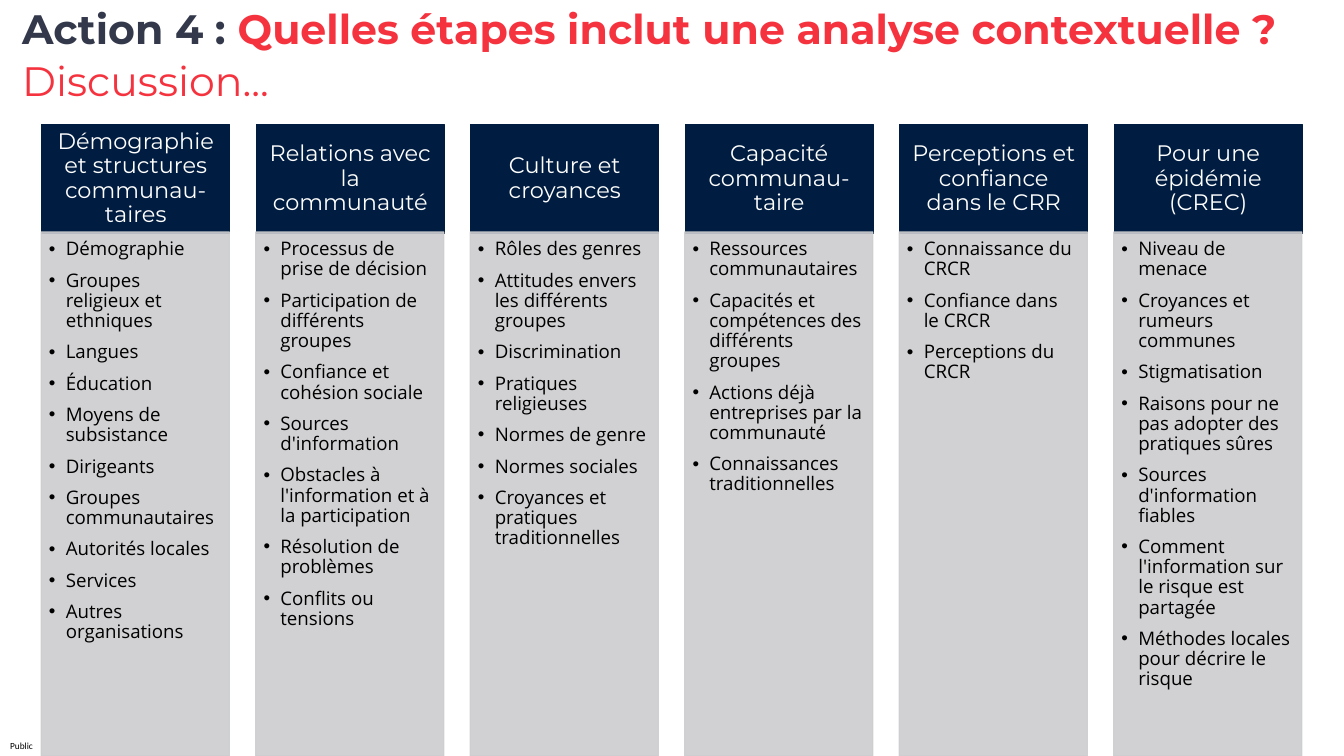
from dataclasses import dataclass

from lxml import etree
from pptx import Presentation
from pptx.dml.color import RGBColor
from pptx.enum.shapes import MSO_SHAPE
from pptx.enum.text import MSO_ANCHOR, MSO_AUTO_SIZE, PP_ALIGN
from pptx.oxml.ns import qn
from pptx.util import Pt

RECTANGLE = MSO_SHAPE.RECTANGLE
TOP, MIDDLE = MSO_ANCHOR.TOP, MSO_ANCHOR.MIDDLE
LEFT, CENTER = PP_ALIGN.LEFT, PP_ALIGN.CENTER
NO_FIT = MSO_AUTO_SIZE.NONE

HEADING_FONT, BODY_FONT = "Montserrat", "Open Sans"
NAVY, GREY, SLATE, RED = "001D41", "CCCDCF", "33394B", "F5333F"
WHITE, BLACK = "FFFFFF", "000000"

# Column grid, in points
FIRST_LEFT, COLUMN_STEP, COLUMN_WIDTH = 44.64, 229.82, 201.6
HEADER_TOP, HEADER_HEIGHT = 133.2, 116.64
LIST_TOP, LIST_HEIGHT, LIST_SHIFT = 248.4, 561.6, -0.5
BULLET_INDENT = 18


@dataclass
class Column:
    heading: str
    items: list[str]


@dataclass
class Frame:
    left: float
    top: float
    width: float
    height: float


COLUMNS = [
    Column("Démographie et structures communau-taires", [
        "Démographie", "Groupes religieux et ethniques", "Langues", "Éducation",
        "Moyens de subsistance", "Dirigeants", "Groupes communautaires",
        "Autorités locales", "Services", "Autres organisations"]),
    Column("Relations avec la communauté", [
        "Processus de prise de décision", "Participation de différents groupes",
        "Confiance et cohésion sociale", "Sources d'information",
        "Obstacles à l'information et à la participation",
        "Résolution de problèmes", "Conflits ou tensions"]),
    Column("Culture et croyances", [
        "Rôles des genres", "Attitudes envers les différents groupes",
        "Discrimination", "Pratiques religieuses", "Normes de genre",
        "Normes sociales", "Croyances et pratiques traditionnelles"]),
    Column("Capacité communau-taire", [
        "Ressources communautaires",
        "Capacités et compétences des différents groupes",
        "Actions déjà entreprises par la communauté",
        "Connaissances traditionnelles"]),
    Column("Perceptions et confiance dans le CRR", [
        "Connaissance du CRCR", "Confiance dans le CRCR", "Perceptions du CRCR"]),
    Column("Pour une épidémie (CREC)", [
        "Niveau de menace", "Croyances et rumeurs communes", "Stigmatisation",
        "Raisons pour ne pas adopter des pratiques sûres",
        "Sources d'information fiables",
        "Comment l'information sur le risque est partagée",
        "Méthodes locales pour décrire le risque"]),
]


def color(value: str) -> RGBColor:
    return RGBColor.from_string(value)


def style_font(font, name: str, size: float, value: str, bold: bool = False) -> None:
    font.name, font.size, font.bold = name, Pt(size), bold
    font.color.rgb = color(value)


def set_frame(text_frame, anchor, insets: tuple[float, float, float, float]) -> None:
    text_frame.word_wrap = True
    text_frame.auto_size = NO_FIT
    text_frame.vertical_anchor = anchor
    (text_frame.margin_left, text_frame.margin_top,
     text_frame.margin_right, text_frame.margin_bottom) = map(Pt, insets)


def add_panel(page, frame: Frame, value: str, opacity: int = 100):
    """Draw a rectangle whose fill and outline share one colour."""
    panel = page.shapes.add_shape(RECTANGLE, Pt(frame.left), Pt(frame.top),
                                  Pt(frame.width), Pt(frame.height))
    panel.shadow.inherit = False
    panel.fill.solid()
    panel.fill.fore_color.rgb = color(value)
    panel.line.color.rgb = color(value)
    panel.line.width = Pt(1)
    if opacity < 100:
        for tone in panel._element.spPr.iter(qn("a:srgbClr")):
            etree.SubElement(tone, qn("a:alpha"), val=str(opacity * 1000))
    return panel


def add_bullet(para) -> None:
    properties = para._p.get_or_add_pPr()
    properties.set("marL", str(Pt(BULLET_INDENT)))
    properties.set("indent", str(-Pt(BULLET_INDENT)))
    etree.SubElement(properties, qn("a:buFont"), typeface="Arial")
    etree.SubElement(properties, qn("a:buChar"), char="•")


def add_column(page, column: Column, left: float) -> None:
    # Heading
    header = add_panel(page, Frame(left, HEADER_TOP, COLUMN_WIDTH, HEADER_HEIGHT), NAVY)
    set_frame(header.text_frame, MIDDLE, (13.44, 7.68, 13.44, 7.68))
    header.text_frame.text = column.heading
    para = header.text_frame.paragraphs[0]
    para.alignment, para.line_spacing = CENTER, 0.9
    style_font(para.runs[0].font, HEADING_FONT, 24, WHITE)

    # Bulleted list
    body = add_panel(page, Frame(left + LIST_SHIFT, LIST_TOP, COLUMN_WIDTH, LIST_HEIGHT),
                     GREY, opacity=90)
    set_frame(body.text_frame, TOP, (8.4, 8.4, 11.2, 12.6))
    body.text_frame.text = "\n".join(column.items)
    for para in body.text_frame.paragraphs:
        add_bullet(para)
        para.alignment, para.line_spacing, para.space_after = LEFT, 0.9, Pt(12)
        style_font(para.runs[0].font, BODY_FONT, 20, BLACK)


def add_title(page) -> None:
    title = page.shapes.title
    title.left, title.top, title.width, title.height = map(Pt, (16.56, 0, 1379.52, 116.64))
    set_frame(title.text_frame, TOP, (7.2, 3.6, 7.2, 3.6))
    title.text_frame.text = "Action 4 : \nDiscussion..."
    question, discussion = title.text_frame.paragraphs
    question.add_run().text = "Quelles étapes inclut une analyse contextuelle ?"
    for para in (question, discussion):
        para.alignment, para.space_after = LEFT, Pt(3)
    style_font(question.runs[0].font, HEADING_FONT, 44, SLATE, bold=True)
    style_font(question.runs[1].font, HEADING_FONT, 44, RED, bold=True)
    style_font(discussion.runs[0].font, HEADING_FONT, 44, RED)


def add_classification(page) -> None:
    box = page.shapes.add_textbox(Pt(0), Pt(789.12), Pt(46.08), Pt(20.88))
    set_frame(box.text_frame, MIDDLE, (0, 0, 0, 0))
    box.text_frame.text = "Public"
    para = box.text_frame.paragraphs[0]
    para.alignment = CENTER
    style_font(para.runs[0].font, "Calibri", 10, BLACK)


def main() -> None:
    deck = Presentation()
    deck.slide_width, deck.slide_height = Pt(1440), Pt(810)
    page = deck.slides.add_slide(deck.slide_layouts[5])  # Title only
    add_classification(page)
    add_title(page)
    for index, column in enumerate(COLUMNS):
        add_column(page, column, FIRST_LEFT + index * COLUMN_STEP)
    deck.save("out.pptx")


if __name__ == "__main__":
    main()
